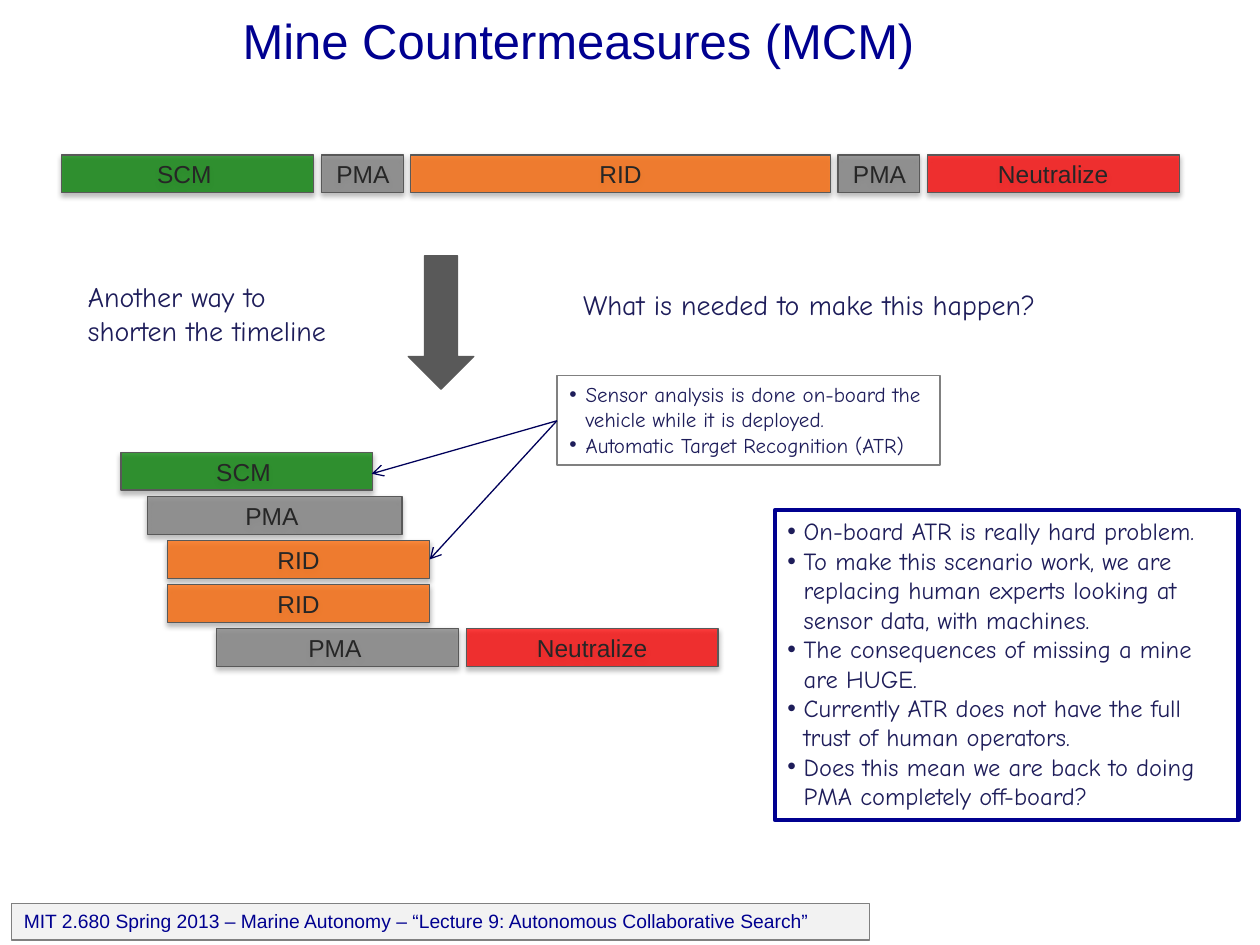
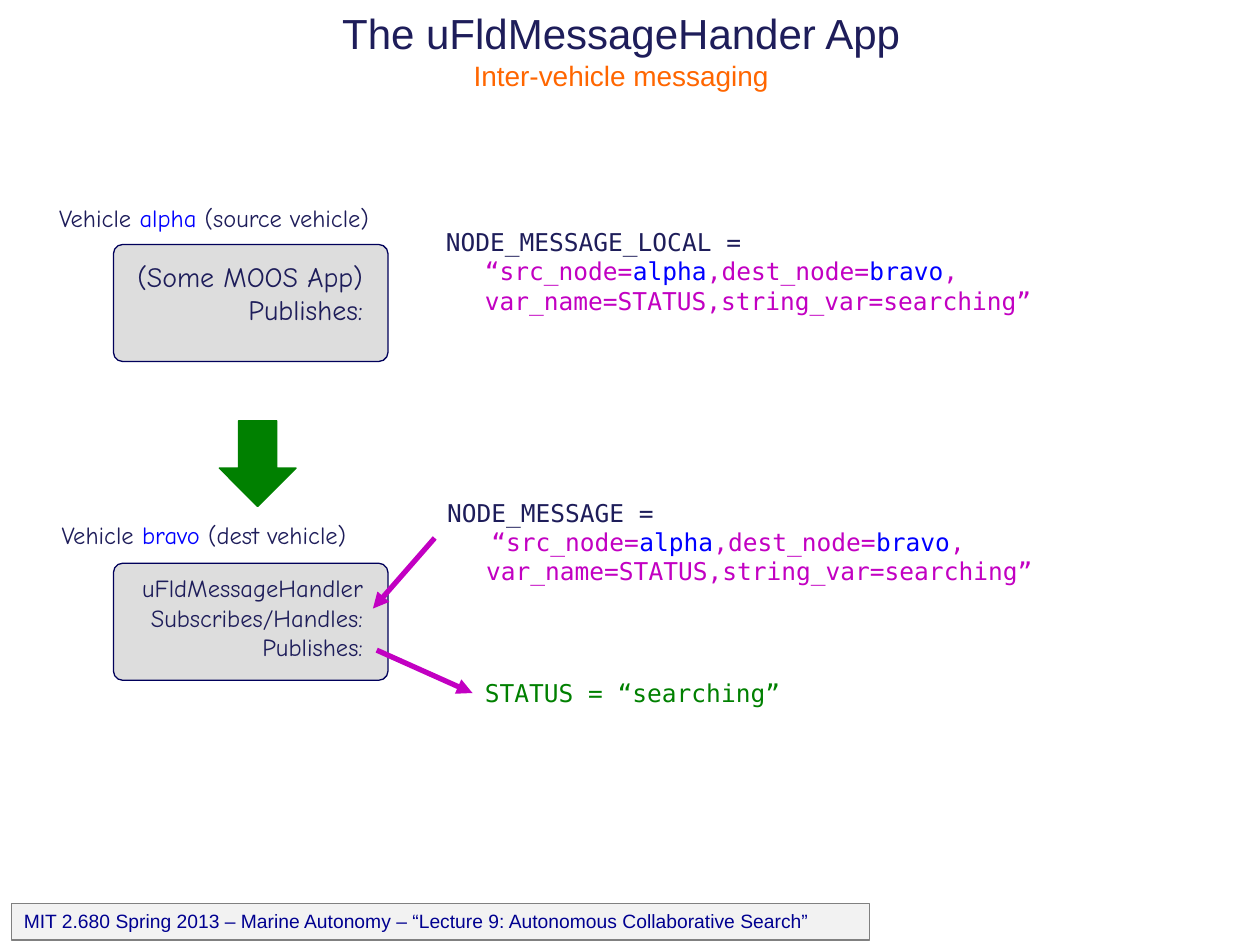
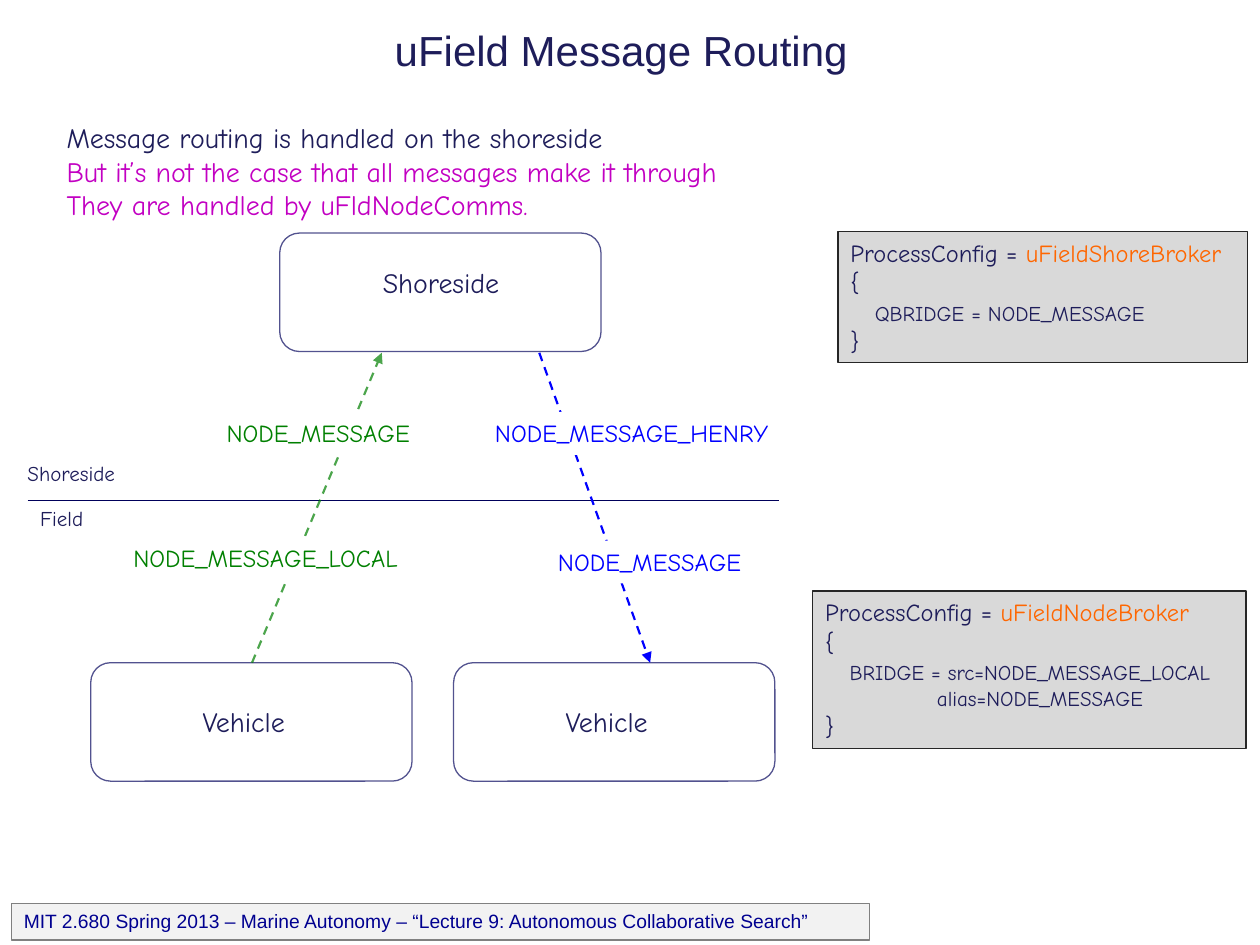
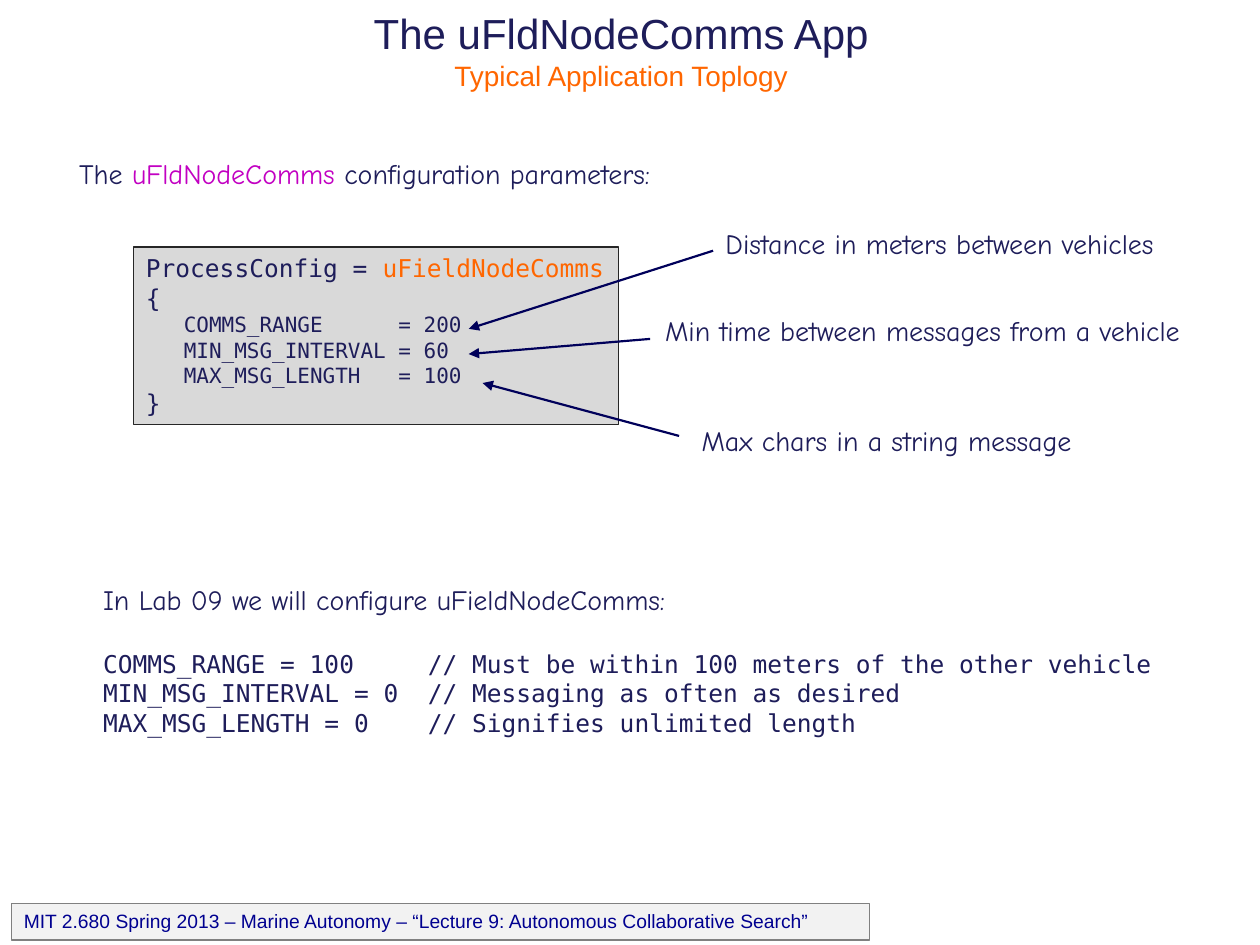
from dataclasses import dataclass
from itertools import chain
from typing import Optional

from lxml import etree
from pptx import Presentation
from pptx import util as u
from pptx.dml import color
from pptx.enum import dml, shapes, text
from pptx.oxml import ns

NAVY, INK, DEEP = "000090", "1E1D5A", "00005A"
ORANGE, MAGENTA, BLUE, GREEN = "FF6600", "C200C2", "0000FF", "008000"
GREY, LIGHT, CHARCOAL, BLACK, WHITE = "808080", "D9D9D9", "595959", "262626", "FFFFFF"
SANS, HAND, MONO = "Arial", "Comic Neue", "DejaVu Sans Mono"
FOOTER = "MIT 2.680 Spring 2013 – Marine Autonomy – “Lecture 9: Autonomous Collaborative Search”"

SHAPE = shapes.MSO_SHAPE
LEFT, CENTER, RIGHT = text.PP_ALIGN.LEFT, text.PP_ALIGN.CENTER, text.PP_ALIGN.RIGHT
TOP, MIDDLE = text.MSO_ANCHOR.TOP, text.MSO_ANCHOR.MIDDLE
STAGE_COLORS = {"SCM ": GREEN, "PMA ": GREY, "RID": ORANGE, "Neutralize": "FF0000"}


@dataclass
class Run:
    text: str
    color: Optional[str] = None
    size: Optional[float] = None
    font: Optional[str] = None


def rgb(value):
    return color.RGBColor.from_string(value)


def inches(values):
    return [u.Inches(value) for value in values]


def add_xml(parent, tag, **attributes):
    child = etree.SubElement(parent, ns.qn(tag))
    for name, value in attributes.items():
        child.set(name, str(value))
    return child


def set_opacity(element, percent):
    add_xml(next(element.iter(ns.qn("a:srgbClr"))), "a:alpha", val=percent * 1000)


class Deck:
    def __init__(self):
        self.presentation = Presentation()
        self.presentation.slide_width = u.Inches(10)
        self.presentation.slide_height = u.Inches(7.5)
        self.layout = self.presentation.slide_layouts[5]
        self.slide = None

    def new_slide(self, title, subtitle=None, box=(1.31, 0.04, 7.24, 0.71), size=24, ink=INK):
        first = self.slide is None
        self.slide = self.presentation.slides.add_slide(self.layout)
        if first:
            footer = self.box((0.09, 7.17, 6.81, 0.29), [FOOTER], fill="F2F2F2", line=GREY,
                              size=11, font=SANS, ink=NAVY)
            self.layout.shapes.element.append(footer.element)
        shape = self.slide.shapes.title
        shape.left, shape.top, shape.width, shape.height = inches(box)
        frame = shape.text_frame
        frame.auto_size = text.MSO_AUTO_SIZE.NONE
        frame.vertical_anchor = MIDDLE
        paragraph = frame.paragraphs[0]
        paragraph.alignment = CENTER
        self.add_run(paragraph, Run(title, ink, size, SANS))
        if subtitle:
            paragraph.add_line_break()
            self.add_run(paragraph, Run(subtitle, ORANGE, 16, SANS))

    def add_run(self, paragraph, part):
        run = paragraph.add_run()
        run.text = part.text
        run.font.name = part.font
        run.font.size = u.Pt(part.size)
        run.font.color.rgb = rgb(part.color)

    def fill_text(self, shape, paragraphs, size=14, font=HAND, ink=INK, align=LEFT, anchor=TOP,
                  wrap=True, grow=True, hanging=0, bullet=False, gaps=None):
        frame = shape.text_frame
        frame.word_wrap = wrap
        frame.vertical_anchor = anchor
        frame.auto_size = (text.MSO_AUTO_SIZE.SHAPE_TO_FIT_TEXT if grow
                           else text.MSO_AUTO_SIZE.NONE)
        for index, parts in enumerate(paragraphs):
            paragraph = frame.add_paragraph() if index else frame.paragraphs[0]
            paragraph.alignment = align
            if gaps and index in gaps:
                paragraph.space_before = u.Pt(gaps[index])
            if hanging:
                properties = paragraph._p.get_or_add_pPr()
                properties.set("marL", str(u.Inches(hanging)))
                properties.set("indent", str(-u.Inches(hanging)))
                if bullet:
                    add_xml(properties, "a:buFont", typeface=SANS)
                    add_xml(properties, "a:buChar", char="•")
            for part in [Run(parts)] if isinstance(parts, str) else parts:
                self.add_run(paragraph, Run(part.text, part.color or ink,
                                            part.size or size, part.font or font))

    def text(self, box, paragraphs, **style):
        self.fill_text(self.slide.shapes.add_textbox(*inches(box)), paragraphs, **style)

    def box(self, box, paragraphs=(), kind=SHAPE.RECTANGLE, fill=None, line=None,
            width=0.75, opacity=None, line_opacity=None, corner=None, **style):
        shape = self.slide.shapes.add_shape(kind, *inches(box))
        shape.shadow.inherit = False
        if corner:
            shape.adjustments[0] = corner
        if fill:
            shape.fill.solid()
            shape.fill.fore_color.rgb = rgb(fill)
        else:
            shape.fill.background()
        if opacity:
            set_opacity(shape.element.spPr, opacity)
        if line:
            shape.line.color.rgb = rgb(line)
            shape.line.width = u.Pt(width)
        else:
            shape.line.fill.background()
        if line_opacity:
            set_opacity(shape.element.spPr.find(ns.qn("a:ln")), line_opacity)
        if paragraphs:
            self.fill_text(shape, paragraphs, **style)
        return shape

    def line(self, start, end, ink=DEEP, width=0.75, head=None, dashed=False, opacity=None):
        connector = self.slide.shapes.add_connector(
            shapes.MSO_CONNECTOR.STRAIGHT, *inches(start + end))
        connector.line.color.rgb = rgb(ink)
        connector.line.width = u.Pt(width)
        if dashed:
            connector.line.dash_style = dml.MSO_LINE.DASH
        properties = connector.element.spPr
        outline = properties.find(ns.qn("a:ln"))
        if opacity:
            set_opacity(outline, opacity)
        if head:
            add_xml(outline, "a:tailEnd", type=head)
        add_xml(properties, "a:effectLst")

    def stage(self, name, left, top, width):
        shape = self.box((left, top, width, 0.3), [name], fill=STAGE_COLORS[name],
                         line=CHARCOAL, opacity=75, font=SANS, ink=BLACK, align=CENTER,
                         anchor=MIDDLE, grow=False)
        effects = shape.element.spPr.find(ns.qn("a:effectLst"))
        shadow = add_xml(effects, "a:outerShdw", blurRad=u.Pt(3.1), dist=u.Pt(1.8),
                         dir=90 * 60000, rotWithShape=0)
        add_xml(shadow, "a:srgbClr", val="000000")
        set_opacity(shadow, 35)

    def down_arrow(self, box, ink):
        self.box(box, kind=SHAPE.DOWN_ARROW, fill=ink, line=ink)


def mine_countermeasures(deck):
    deck.new_slide("Mine Countermeasures (MCM)", box=(0.34, 0, 8.5, 0.63), size=28, ink=NAVY)
    left = 0.49
    for name, width in (("SCM ", 2), ("PMA ", 0.65), ("RID", 3.33), ("PMA ", 0.65),
                        ("Neutralize", 2)):
        deck.stage(name, left, 1.23, width)
        left += width + 0.06

    deck.text((0.6, 2.17, 2.33, 0.64), ["Another way to shorten the timeline"], size=16)
    deck.down_arrow((3.24, 2.03, 0.52, 1.06), CHARCOAL)
    deck.text((4.53, 2.23, 4.06, 0.37), ["What is needed to make this happen?"],
              size=16, wrap=False)

    deck.box((4.42, 2.98, 3.04, 0.71), [
        "Sensor analysis is done on-board the vehicle while it is deployed.",
        "Automatic Target Recognition (ATR)",
    ], line=GREY, size=12, hanging=0.13, bullet=True)

    rows = ((("SCM ", 0.96, 2),), (("PMA ", 1.17, 2.02),), (("RID", 1.33, 2.08),),
            (("RID", 1.33, 2.08),), (("PMA ", 1.72, 1.92), ("Neutralize", 3.7, 2)))
    for index, row in enumerate(rows):
        for name, left, width in row:
            deck.stage(name, left, 3.59 + 0.35 * index, width)
    for end in ((2.95, 3.76), (3.41, 4.44)):
        deck.line((4.42, 3.34), end, head="arrow")

    deck.box((6.15, 4.05, 3.68, 2.46), [
        "On-board ATR is really hard problem.",
        "To make this scenario work, we are replacing human experts looking at "
        "sensor data, with machines.",
        "The consequences of missing a mine are HUGE.",
        "Currently ATR does not have the full trust of human operators.",
        "Does this mean we are back to doing PMA completely off-board?",
    ], line=NAVY, width=2.5, hanging=0.13, bullet=True)


def message_handler(deck):
    deck.new_slide("The uFldMessageHander App", "Inter-vehicle messaging")
    message = [Run("“src_node=", MAGENTA), Run("alpha", BLUE), Run(",dest_node=", MAGENTA),
               Run("bravo", BLUE), Run(", var_name=STATUS,string_var=searching”", MAGENTA)]
    code = dict(font=MONO, hanging=0.31)

    for top in (1.94, 4.47):
        deck.box((0.9, top, 2.18, 0.93), kind=SHAPE.ROUNDED_RECTANGLE, fill=LIGHT,
                 line=DEEP, opacity=89, corner=0.081)
    deck.text((0.37, 1.56, 3.01, 0.34),
              [[Run("Vehicle "), Run("alpha", BLUE), Run(" (source vehicle)")]])
    deck.text((0.92, 2.01, 2.06, 0.64), ["(Some MOOS App)", "Publishes:"],
              size=16, align=RIGHT)
    deck.text((3.44, 1.75, 6.32, 0.81), [[Run("NODE_MESSAGE_LOCAL = "), *message]], **code)
    deck.down_arrow((1.74, 3.34, 0.61, 0.68), GREEN)

    deck.text((0.39, 4.08, 2.81, 0.34),
              [[Run("Vehicle "), Run("bravo ", BLUE), Run("(dest vehicle)")]])
    deck.text((0.92, 4.5, 2.06, 0.81),
              ["uFldMessageHandler Subscribes/Handles:", "Publishes:"], align=RIGHT)
    deck.text((3.45, 3.9, 6.32, 0.81),
              ["NODE_MESSAGE =", [Run("   ", MAGENTA), *message]], **code)
    deck.text((3.75, 5.33, 4.96, 0.34), ["STATUS = “searching”"], ink=GREEN, **code)
    for start, end in (((3.45, 4.27), (2.96, 4.83)), ((2.99, 5.16), (3.75, 5.5))):
        deck.line(start, end, MAGENTA, 3, "triangle")


def message_routing(deck):
    deck.new_slide("uField Message Routing")
    deck.text((0.43, 0.91, 5.84, 0.91), [
        "Message routing is handled on the shoreside",
        [Run("But it’s not the case that all messages make it through", MAGENTA)],
        [Run("They are handled by uFldNodeComms.", MAGENTA)],
    ], size=16, wrap=False)

    deck.line((0.22, 3.97), (6.18, 3.97))
    for name, box, label in (
            ("Shoreside", (2.22, 1.85), (2.94, 2.06, 1.18, 0.37)),
            ("Vehicle", (0.72, 5.26), (1.51, 5.54, 0.91, 0.37)),
            ("Vehicle", (3.6, 5.26), (4.39, 5.54, 0.91, 0.37))):
        deck.box(box + (2.55, 0.94), kind=SHAPE.ROUNDED_RECTANGLE, line=DEEP, line_opacity=68)
        deck.text(label, [name], size=16, wrap=False)

    deck.line((2, 5.26), (3.03, 2.8), GREEN, 1.25, "triangle", dashed=True, opacity=70)
    deck.line((4.28, 2.8), (5.16, 5.26), BLUE, 1.25, "triangle", dashed=True)
    for name, left, top, width, ink in (
            ("NODE_MESSAGE_LOCAL", 0.96, 4.26, 2.4, GREEN),
            ("NODE_MESSAGE", 1.7, 3.27, 1.7, GREEN),
            ("NODE_MESSAGE_HENRY", 3.83, 3.27, 2.42, BLUE),
            ("NODE_MESSAGE", 4.33, 4.29, 1.7, BLUE)):
        deck.box((left, top, width, 0.34), [name], fill=WHITE, ink=ink, wrap=False)
    deck.text((0.12, 3.61, 0.93, 0.3), ["Shoreside"], size=12, wrap=False)
    deck.text((0.22, 3.96, 0.55, 0.3), ["Field"], size=12, wrap=False)

    for box, broker, settings, wrap in (
            ((6.65, 1.84, 3.25, 1.04), "uFieldShoreBroker",
             [[Run("   "), Run("QBRIDGE = NODE_MESSAGE", size=12)]], False),
            ((6.45, 4.69, 3.44, 1.25), "uFieldNodeBroker",
             [[Run("   "), Run("BRIDGE = src=NODE_MESSAGE_LOCAL", size=12)],
              [Run("                alias=NODE_MESSAGE", size=12)]], True)):
        config_box(deck, box, broker, settings, wrap=wrap)


def config_box(deck, box, process, settings, **style):
    header = [Run("ProcessConfig = "), Run(process, ORANGE)]
    deck.box(box, list(chain([header, "{"], settings, ["}"])), fill=LIGHT, line=BLACK, **style)


def node_comms(deck):
    deck.new_slide("The uFldNodeComms App", "Typical Application Toplogy")
    deck.text((0.53, 1.19, 4.9, 0.37),
              [[Run("The "), Run("uFldNodeComms ", MAGENTA), Run("configuration parameters:")]],
              size=16, wrap=False)
    settings = ("   COMMS_RANGE      = 200", "   MIN_MSG_INTERVAL = 60",
                "   MAX_MSG_LENGTH   = 100")
    config_box(deck, (1.06, 1.96, 3.85, 1.41), "uFieldNodeComms",
               [[Run(setting, size=12)] for setting in settings], font=MONO, wrap=False)

    for note, box, start, end in (
            ("Distance in meters between vehicles", (5.66, 1.75, 3.87, 0.37),
             (5.66, 1.99), (3.72, 2.61)),
            ("Min time between messages from a vehicle", (5.18, 2.44, 4.59, 0.37),
             (5.16, 2.69), (3.72, 2.81)),
            ("Max chars in a string message", (5.47, 3.31, 3.33, 0.37),
             (5.39, 3.46), (3.83, 3.04))):
        deck.text(box, [note], size=16, wrap=False)
        deck.line(start, end, width=1.25, head="triangle")

    deck.text((0.72, 4.57, 8.66, 1.35), [
        [Run("In Lab 09 we will configure uFieldNodeComms:", size=16, font=HAND)],
        "COMMS_RANGE = 100     // Must be within 100 meters of the other vehicle",
        "MIN_MSG_INTERVAL = 0  // Messaging as often as desired",
        "MAX_MSG_LENGTH = 0    // Signifies unlimited length",
    ], font=MONO, gaps={1: 19})


def main():
    deck = Deck()
    for build in (mine_countermeasures, message_handler, message_routing, node_comms):
        build(deck)
    deck.presentation.save("out.pptx")


if __name__ == "__main__":
    main()
